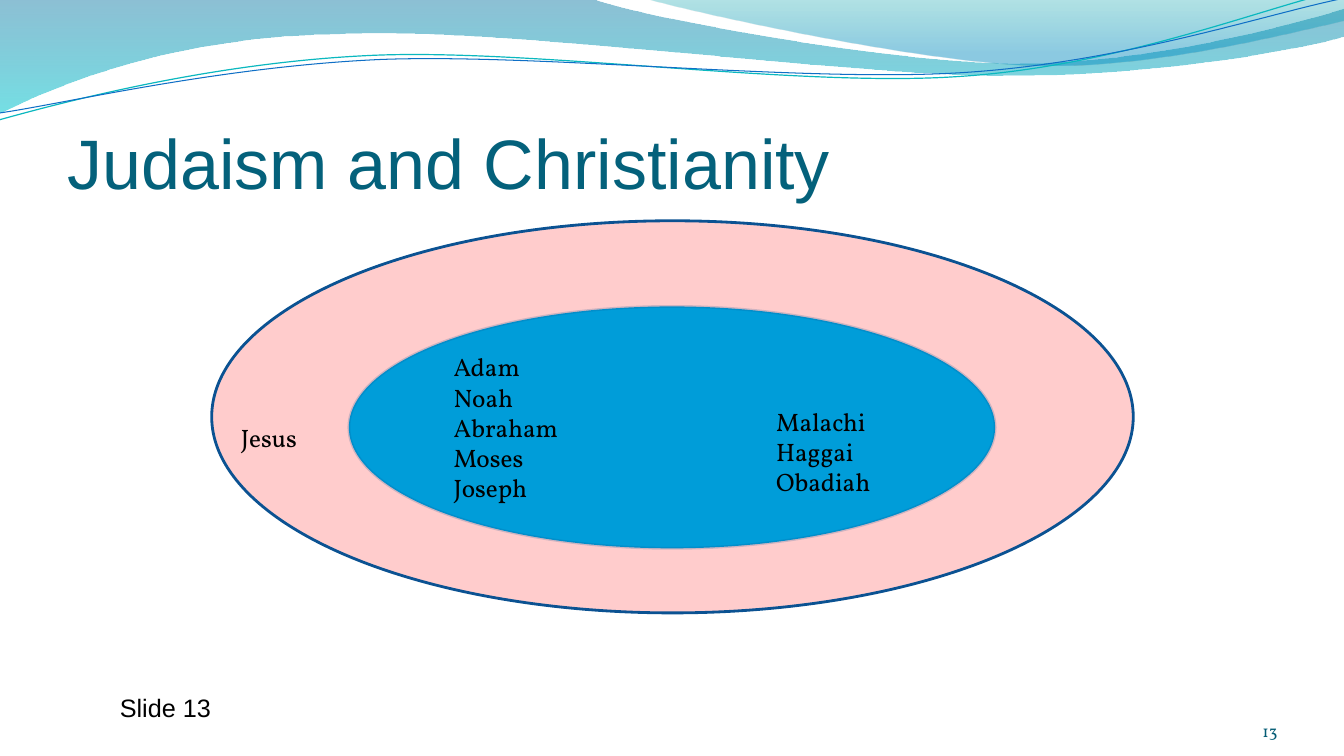
from dataclasses import dataclass
from math import cos, radians, sin
from lxml.etree import SubElement
from pptx import Presentation
from pptx.dml.color import RGBColor
from pptx.enum.shapes import MSO_SHAPE
from pptx.enum.text import MSO_ANCHOR, MSO_AUTO_SIZE, PP_ALIGN
from pptx.oxml.ns import qn
from pptx.util import Inches, Pt


@dataclass(frozen=True)
class Theme:
    heading_font: str = "Arial"
    body_font: str = "Vollkorn"
    title_size: int = 50
    body_size: int = 18
    number_size: int = 12
    title: str = "04617B"
    number: str = "045C75"
    text: str = "000000"
    outline: str = "0B5292"
    christianity: str = "FF0000"
    judaism: str = "009DD9"
    teal_line: str = "0AB8BF"
    blue_line: str = "0F6FC6"
    broad_gradient: tuple = ((0, "0074A1", 45), (1, "00C6CF", 55))
    right_gradient: tuple = ((0, "00A1A9", 30), (0.8, "008BBF", 45))


THEME = Theme()


def set_opacities(shape, opacities):
    """Give the shape's colours, in order, their opacity in percent."""
    colors = list(shape._element.spPr.iter(qn("a:srgbClr")))
    for color, opacity in zip(colors, opacities):
        if opacity < 100:
            SubElement(color, qn("a:alpha"), val=str(opacity * 1000))


def write(frame, lines, font, size, color, align=PP_ALIGN.LEFT):
    """Fill a text frame and format every run alike."""
    frame.text = "\n".join(lines)
    for paragraph in frame.paragraphs:
        paragraph.alignment = align
        for run in paragraph.runs:
            run.font.name = font
            run.font.size = Pt(size)
            run.font.color.rgb = RGBColor.from_string(color)


presentation = Presentation()
presentation.slide_width = Inches(13.33)
presentation.slide_height = Inches(7.5)
slide = presentation.slides.add_slide(presentation.slide_layouts[5])
shapes = slide.shapes

# Header waves: two numbers make a line, six make a curve
broad_wave = [
    (0, 0), (5.87, -0.01), (6.34, 0.17, 8.85, 0.63, 10.11, 0.63),
    (11.38, 0.63, 12.78, 0.26, 13.33, 0.09), (13.35, 0.36),
    (13.11, 0.44, 11.6, 0.76, 9.94, 0.75), (8.29, 0.75, 5.09, 0.28, 3.43, 0.34),
    (1.72, 0.36, 0.61, 0.83, -0.01, 1.13),
]
right_wave = [
    (6.39, -0.01), (6.79, 0.11, 9.09, 0.62, 10.25, 0.65),
    (11.41, 0.69, 12.82, 0.32, 13.33, 0.21), (13.33, 0),
]
teal_wave = [
    (-0.01, 1.19), (0.64, 1.01, 2.11, 0.62, 3.69, 0.55),
    (5.27, 0.48, 7.9, 0.87, 9.5, 0.76), (11.1, 0.66, 12.52, 0.08, 13.31, -0.1),
]
blue_wave = [
    (0, 1.12), (0.63, 1.03, 2.18, 0.66, 3.78, 0.59),
    (5.37, 0.53, 7.96, 0.82, 9.55, 0.72), (11.15, 0.62, 12.55, 0.14, 13.34, -0.02),
]
TILT = 2.7
CENTER_X, CENTER_Y = 6.66, 0.58
# Each wave has a gradient, or a line colour and width; lines are tilted
waves = [
    (broad_wave, THEME.broad_gradient, None),
    (right_wave, THEME.right_gradient, None),
    (teal_wave, None, (THEME.teal_line, 0.85)),
    (blue_wave, None, (THEME.blue_line, 0.75)),
]
for segments, gradient, stroke in waves:
    turn = radians(TILT if stroke else 0)
    outline = []
    for segment in segments:
        offsets = [(x - CENTER_X, y - CENTER_Y) for x, y in zip(segment[::2], segment[1::2])]
        outline.append([
            (Inches(CENTER_X + x * cos(turn) - y * sin(turn)),
             Inches(CENTER_Y + x * sin(turn) + y * cos(turn)))
            for x, y in offsets
        ])
    ends = [points[-1] for points in outline]
    builder = shapes.build_freeform(*ends[0])
    builder.add_line_segments(ends[1:], close=gradient is not None)
    wave = builder.convert_to_shape()
    wave.shadow.inherit = False

    # Bend the straight segments that have control points
    straight_lines = list(wave._element.spPr.iter(qn("a:lnTo")))
    for straight, points in zip(straight_lines, outline[1:]):
        if len(points) == 3:
            straight.tag = qn("a:cubicBezTo")
            straight.remove(straight[0])
            for x, y in points:
                SubElement(straight, qn("a:pt"), x=str(x - wave.left), y=str(y - wave.top))

    if gradient:
        wave.line.fill.background()
        wave.fill.gradient()
        wave.fill.gradient_angle = 270
        for stop, (position, color, _) in zip(wave.fill.gradient_stops, gradient):
            stop.position = position
            stop.color.rgb = RGBColor.from_string(color)
        set_opacities(wave, [opacity for _, _, opacity in gradient])
    else:
        wave.rotation = 360 - TILT
        wave.fill.background()
        wave.line.color.rgb = RGBColor.from_string(stroke[0])
        wave.line.width = Pt(stroke[1])

# Title
title = shapes.title
title.left, title.top, title.width, title.height = map(Inches, (0.67, 0.77, 12, 1.25))
title_frame = title.text_frame
title_frame.auto_size = MSO_AUTO_SIZE.NONE
title_frame.vertical_anchor = MSO_ANCHOR.BOTTOM
title_frame.margin_left = title_frame.margin_right = title_frame.margin_bottom = 0
title_frame.margin_top = Inches(0.05)
write(title_frame, ["Judaism and Christianity"], THEME.heading_font, THEME.title_size, THEME.title)

# Nested ellipses: box, fill, opacity of fill and outline
religions = [
    ((2.1, 2.19, 9.14, 3.89), THEME.christianity, (20, 100)),
    ((3.46, 3.04, 6.41, 2.4), THEME.judaism, (100, 20)),
]
for box, color, opacities in religions:
    religion = shapes.add_shape(MSO_SHAPE.OVAL, *map(Inches, box))
    religion.shadow.inherit = False
    religion.fill.solid()
    religion.fill.fore_color.rgb = RGBColor.from_string(color)
    religion.line.color.rgb = RGBColor.from_string(THEME.outline)
    religion.line.width = Pt(2)
    set_opacities(religion, opacities)

# Prophets and slide label
labels = [
    ((4.4, 3.44, 1.56, 1.62), ["Adam", "Noah", "Abraham", "Moses", "Joseph"], THEME.body_font),
    ((7.6, 3.98, 1.8, 1.01), ["Malachi", "Haggai", "Obadiah"], THEME.body_font),
    ((2.29, 4.14, 1.02, 0.4), ["Jesus"], THEME.body_font),
    ((1.09, 6.82, 1.18, 0.4), ["Slide 13"], THEME.heading_font),
]
for box, lines, font in labels:
    label_frame = shapes.add_textbox(*map(Inches, box)).text_frame
    label_frame.word_wrap = True
    label_frame.auto_size = MSO_AUTO_SIZE.SHAPE_TO_FIT_TEXT
    write(label_frame, lines, font, THEME.body_size, THEME.text)

# Slide number
number_frame = shapes.add_textbox(*map(Inches, (11.56, 6.95, 1.11, 0.4))).text_frame
number_frame.word_wrap = True
number_frame.vertical_anchor = MSO_ANCHOR.BOTTOM
number_frame.margin_left = number_frame.margin_right = 0
number_frame.margin_top = number_frame.margin_bottom = 0
write(number_frame, ["13"], THEME.body_font, THEME.number_size, THEME.number, PP_ALIGN.RIGHT)

presentation.save("out.pptx")
